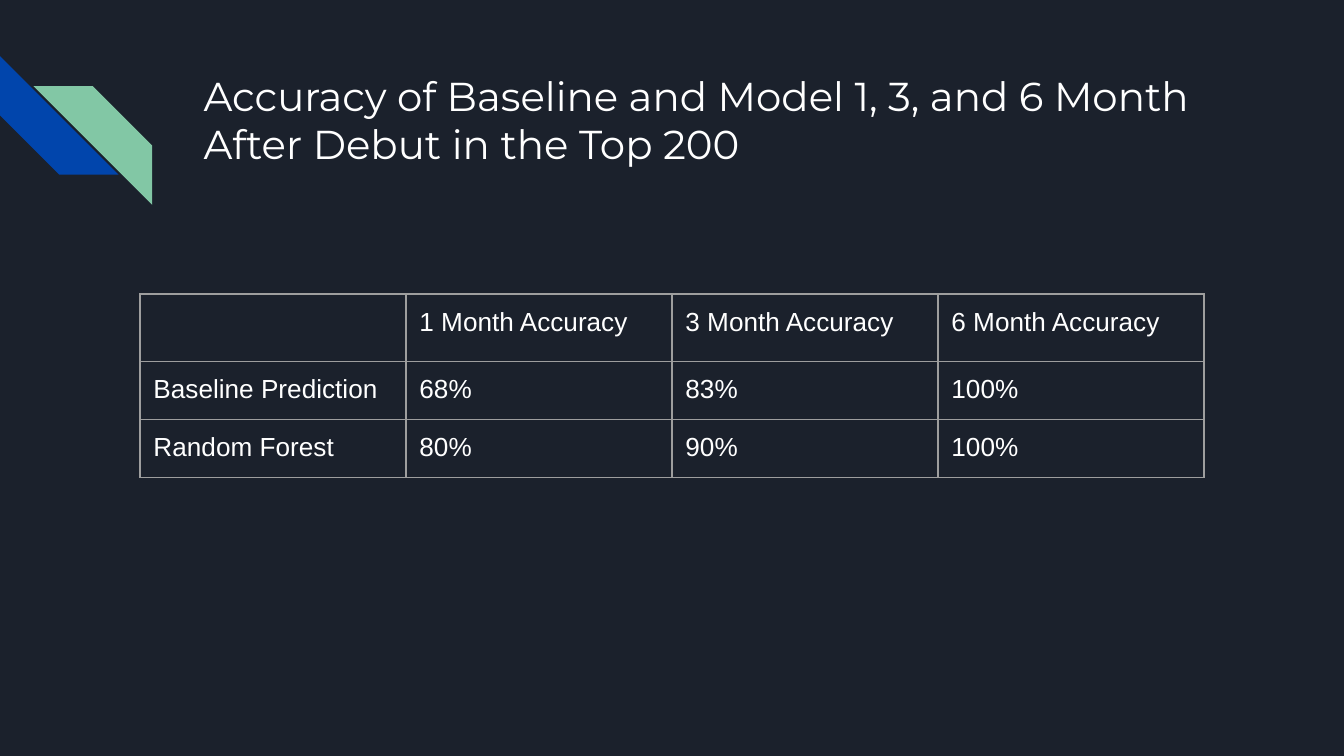
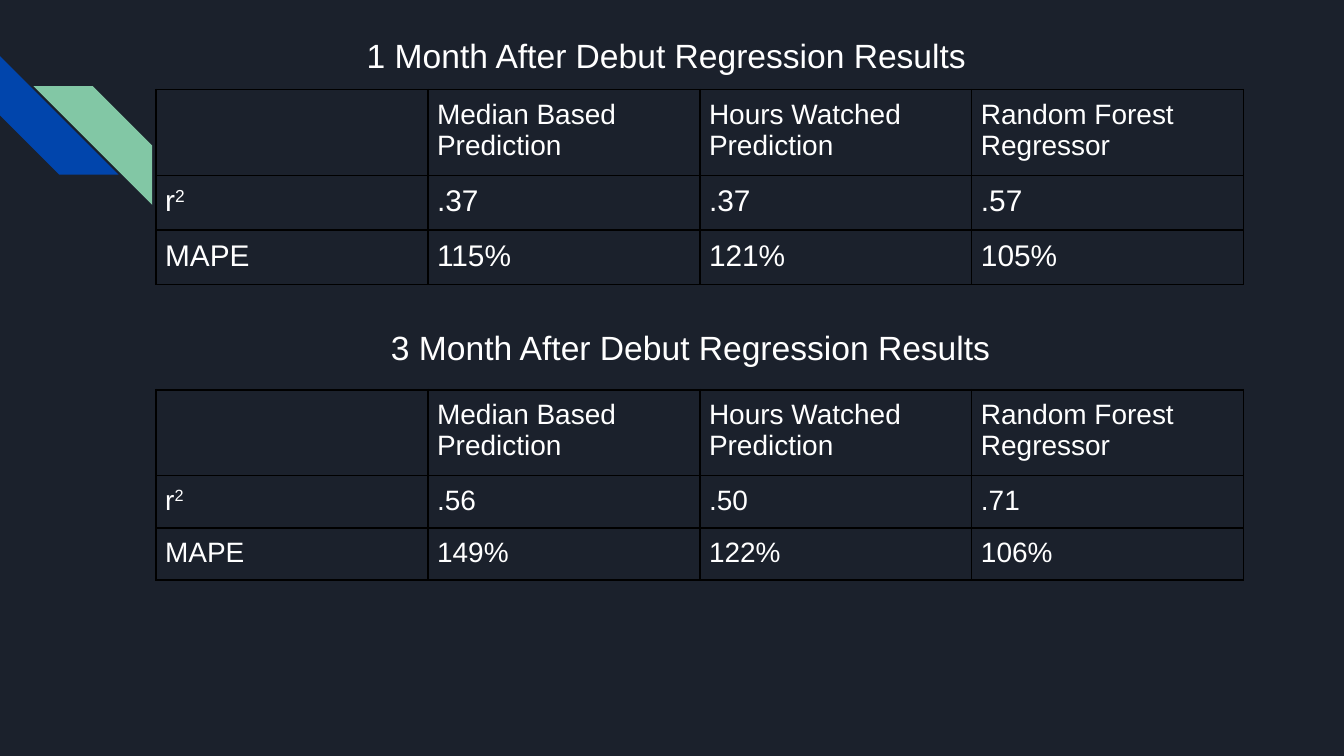
from lxml import etree
from pptx import Presentation
from pptx.dml.color import RGBColor
from pptx.enum import shapes, text
from pptx.oxml.ns import qn
from pptx.util import Pt

# Content
TITLE = "Accuracy of Baseline and Model 1, 3, and 6 Month After Debut in the Top 200"
ACCURACY = [
    ["", "1 Month Accuracy", "3 Month Accuracy", "6 Month Accuracy"],
    ["Baseline Prediction", "68%", "83%", "100%"],
    ["Random Forest", "80%", "90%", "100%"],
]
MODELS = ["", "Median Based Prediction", "Hours Watched Prediction",
          "Random Forest Regressor"]
R_SQUARED = ("r", "2")  # base and superscript
# heading, heading left and top, table top, body size, body row height, values
REGRESSIONS = [
    ("1 Month After Debut Regression Results", 173.5, 11.5, 48, 16, 27.8,
     [[R_SQUARED, ".37", ".37", ".57"], ["MAPE", "115%", "121%", "105%"]]),
    ("3 Month After Debut Regression Results", 186.5, 168, 208.8, 15, 26.6,
     [[R_SQUARED, ".56", ".50", ".71"], ["MAPE", "149%", "122%", "106%"]]),
]

# Shared style
BACK, WHITE, BLACK, GREY = "1B212C", "FFFFFF", "000000", "9E9E9E"
BLUE, GREEN = "0145AC", "82C7A5"
BODY_FONT, TITLE_FONT = "Arial", "Montserrat"
STRIPE = 63.6
PAD = 7.2


def rgb(value):
    return RGBColor.from_string(value)


def add_run(p, words, size, font=BODY_FONT):
    r = p.add_run()
    r.text = words
    r.font.size, r.font.name = Pt(size), font
    r.font.color.rgb = rgb(WHITE)
    return r


def add_stripe(s, left, top, color):
    sp = s.shapes.add_shape(shapes.MSO_SHAPE.DIAGONAL_STRIPE,
                            Pt(left), Pt(top), Pt(STRIPE), Pt(STRIPE))
    sp.shadow.inherit = False
    sp.adjustments[0] = 0.5
    sp.fill.solid()
    sp.fill.fore_color.rgb = rgb(color)
    sp.line.fill.background()
    return sp


def new_slide(prs):
    s = prs.slides.add_slide(prs.slide_layouts[6])
    s.background.fill.solid()
    s.background.fill.fore_color.rgb = rgb(BACK)
    add_stripe(s, 0, 30, BLUE).rotation = 270
    green = add_stripe(s, 18, 46.2, GREEN)
    green._element.spPr.find(qn("a:xfrm")).set("flipH", "1")
    return s


def add_text(s, box, words, size, font=BODY_FONT, align=text.PP_ALIGN.LEFT):
    tf = s.shapes.add_textbox(*map(Pt, box)).text_frame
    tf.word_wrap = True
    tf.margin_left = tf.margin_right = tf.margin_top = tf.margin_bottom = Pt(PAD)
    p = tf.paragraphs[0]
    p.alignment = align
    add_run(p, words, size, font)


def set_borders(cell, color, width):
    tc_pr = cell._tc.get_or_add_tcPr()
    for side in ("lnL", "lnR", "lnT", "lnB"):
        ln = etree.SubElement(tc_pr, qn("a:" + side), w=str(Pt(width)))
        fill = etree.SubElement(ln, qn("a:solidFill"))
        etree.SubElement(fill, qn("a:srgbClr"), val=color)


def add_grid(s, left, top, col_width, heights, rows, sizes, pad, border):
    cols = len(rows[0])
    table = s.shapes.add_table(len(rows), cols, Pt(left), Pt(top),
                               Pt(col_width * cols), Pt(sum(heights))).table
    table.first_row = table.horz_banding = False
    for col in table.columns:
        col.width = Pt(col_width)
    for i, values in enumerate(rows):
        table.rows[i].height = Pt(heights[i])
        for j, value in enumerate(values):
            cell = table.cell(i, j)
            cell.margin_left = cell.margin_right = Pt(pad)
            cell.margin_top = cell.margin_bottom = Pt(pad)
            set_borders(cell, *border)
            cell.fill.background()
            p = cell.text_frame.paragraphs[0]
            if isinstance(value, tuple):
                base, power = value
                add_run(p, base, sizes[i])
                r = add_run(p, power, sizes[i])
                r._r.get_or_add_rPr().set("baseline", "30000")
            elif value:
                add_run(p, value, sizes[i])


def main():
    prs = Presentation()
    prs.slide_width, prs.slide_height = Pt(720), Pt(405)

    # Accuracy slide
    s = new_slide(prs)
    add_text(s, (102, 31, 554.4, 72), TITLE, 21.6, TITLE_FONT)
    add_grid(s, 75, 157.5, 142.5, [34.4, 30, 30], ACCURACY, [14] * 3, PAD,
             (GREY, 0.75))

    # Regression slide
    s = new_slide(prs)
    for heading, left, top, table_top, size, height, values in REGRESSIONS:
        add_grid(s, 83.5, table_top, 145.7, [43.4, height, height],
                 [MODELS] + values, [15, size, size], 5, (BLACK, 1))
        add_text(s, (left, top, 367, 36), heading, 18,
                 align=text.PP_ALIGN.CENTER)

    prs.save("out.pptx")


if __name__ == "__main__":
    main()
